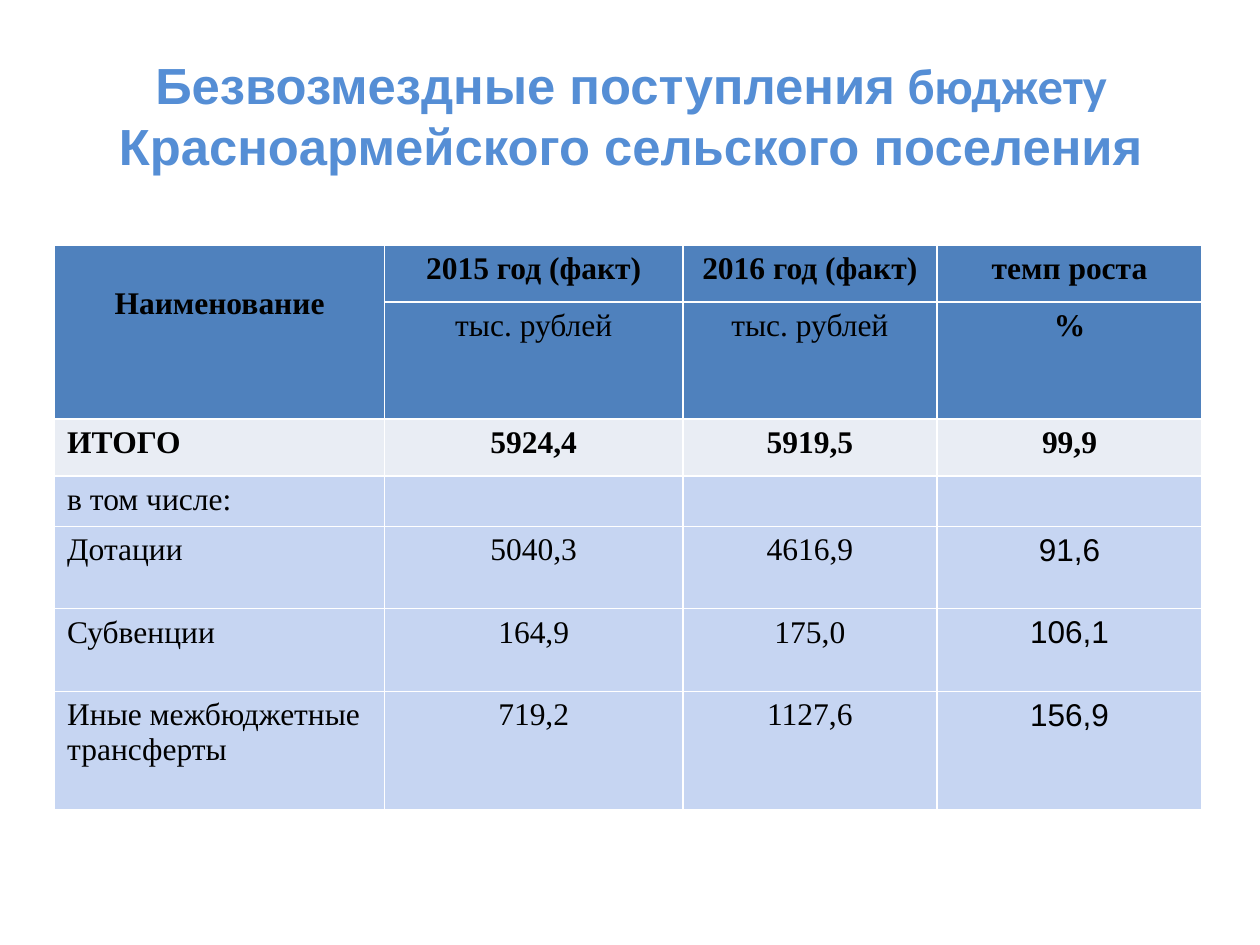
from dataclasses import dataclass

from lxml.etree import SubElement
from pptx import Presentation
from pptx.dml.color import RGBColor
from pptx.enum.text import MSO_ANCHOR as Anchor, PP_ALIGN as Align
from pptx.oxml.ns import qn
from pptx.util import Pt


@dataclass(frozen=True)
class Theme:
    title: str = "558ED5"
    text: str = "000000"
    header: str = "4F81BD"
    total: str = "E9EDF4"
    body: str = "C6D5F2"
    border: str = "FFFFFF"
    title_size: int = 29
    cell_size: int = 18
    sans: str = "Arial"
    serif: str = "Times New Roman"
    accent: str = "Calibri"


THEME = Theme()

TITLE_RUNS = [
    ("Безвозмездные поступления", THEME.sans),
    (" бюджету ", THEME.accent),
    ("Красноармейского сельского поселения", THEME.sans),
]
COLUMN_WIDTHS = [188.6, 170.4, 145.2, 151.6]

# Each row: height, fill, bold columns, texts
ROWS = [
    (32.6, THEME.header, {0, 1, 2, 3},
     ["Наименование", "2015 год (факт)", "2016 год (факт)", "темп роста"]),
    (66.8, THEME.header, {3}, ["", "тыс. рублей", "тыс. рублей", "%"]),
    (32.6, THEME.total, {0, 1, 2, 3}, ["ИТОГО", "5924,4", "5919,5", "99,9"]),
    (27.4, THEME.body, set(), ["в том числе:", "", "", ""]),
    (47, THEME.body, set(), ["Дотации", "5040,3", "4616,9", "91,6"]),
    (47.2, THEME.body, set(), ["Субвенции", "164,9", "175,0", "106,1"]),
    (67.6, THEME.body, set(),
     ["Иные межбюджетные трансферты", "719,2", "1127,6", "156,9"]),
]
HEADER_ROWS = 2
GROWTH_COLUMN = 3


def style_font(font, name, size, color, bold):
    font.name = name
    font.size = Pt(size)
    font.bold = bold
    font.color.rgb = RGBColor.from_string(color)


def add_title(slide):
    shape = slide.shapes.add_textbox(Pt(36.7), Pt(26), Pt(648), Pt(79))
    text_frame = shape.text_frame
    text_frame.word_wrap = True
    text_frame.vertical_anchor = Anchor.MIDDLE
    paragraph = text_frame.paragraphs[0]
    paragraph.alignment = Align.CENTER
    for text, font_name in TITLE_RUNS:
        run = paragraph.add_run()
        run.text = text
        style_font(run.font, font_name, THEME.title_size, THEME.title, True)


def set_borders(cell):
    properties = cell._tc.get_or_add_tcPr()
    for position, side in enumerate(("lnL", "lnR", "lnT", "lnB")):
        line = SubElement(properties, qn(f"a:{side}"), w=str(Pt(1)))
        fill = SubElement(line, qn("a:solidFill"))
        SubElement(fill, qn("a:srgbClr"), val=THEME.border)
        properties.insert(position, line)  # borders precede the fill


def fill_cell(cell, text, color, font_name, bold, alignment):
    cell.fill.solid()
    cell.fill.fore_color.rgb = RGBColor.from_string(color)
    set_borders(cell)
    cell.text_frame.text = text
    paragraph = cell.text_frame.paragraphs[0]
    paragraph.alignment = alignment
    for run in paragraph.runs:
        style_font(run.font, font_name, THEME.cell_size, THEME.text, bold)
    if not text:  # keep empty cells from stretching their row
        SubElement(paragraph._p, qn("a:endParaRPr"), sz="1200")


def add_income_table(slide):
    heights = [row[0] for row in ROWS]
    table = slide.shapes.add_table(
        len(ROWS), len(COLUMN_WIDTHS), Pt(31.2), Pt(140),
        Pt(sum(COLUMN_WIDTHS)), Pt(sum(heights))).table
    for column, width in zip(table.columns, COLUMN_WIDTHS):
        column.width = Pt(width)

    for row_index, (height, color, bold_columns, texts) in enumerate(ROWS):
        table.rows[row_index].height = Pt(height)
        is_body = color == THEME.body
        is_header = row_index < HEADER_ROWS
        for column_index, text in enumerate(texts):
            is_growth = is_body and column_index == GROWTH_COLUMN
            is_label = column_index == 0 and not is_header
            fill_cell(table.cell(row_index, column_index), text, color,
                      THEME.sans if is_growth else THEME.serif,
                      column_index in bold_columns,
                      Align.LEFT if is_label else Align.CENTER)

    # Name heading spans both header rows, one line down
    heading = table.cell(0, 0)
    heading.merge(table.cell(HEADER_ROWS - 1, 0))
    heading.margin_top = Pt(23.6)


def main():
    presentation = Presentation()
    presentation.slide_width = Pt(720)
    presentation.slide_height = Pt(540)
    slide = presentation.slides.add_slide(presentation.slide_layouts[6])
    add_title(slide)
    add_income_table(slide)
    presentation.save("out.pptx")


if __name__ == "__main__":
    main()
